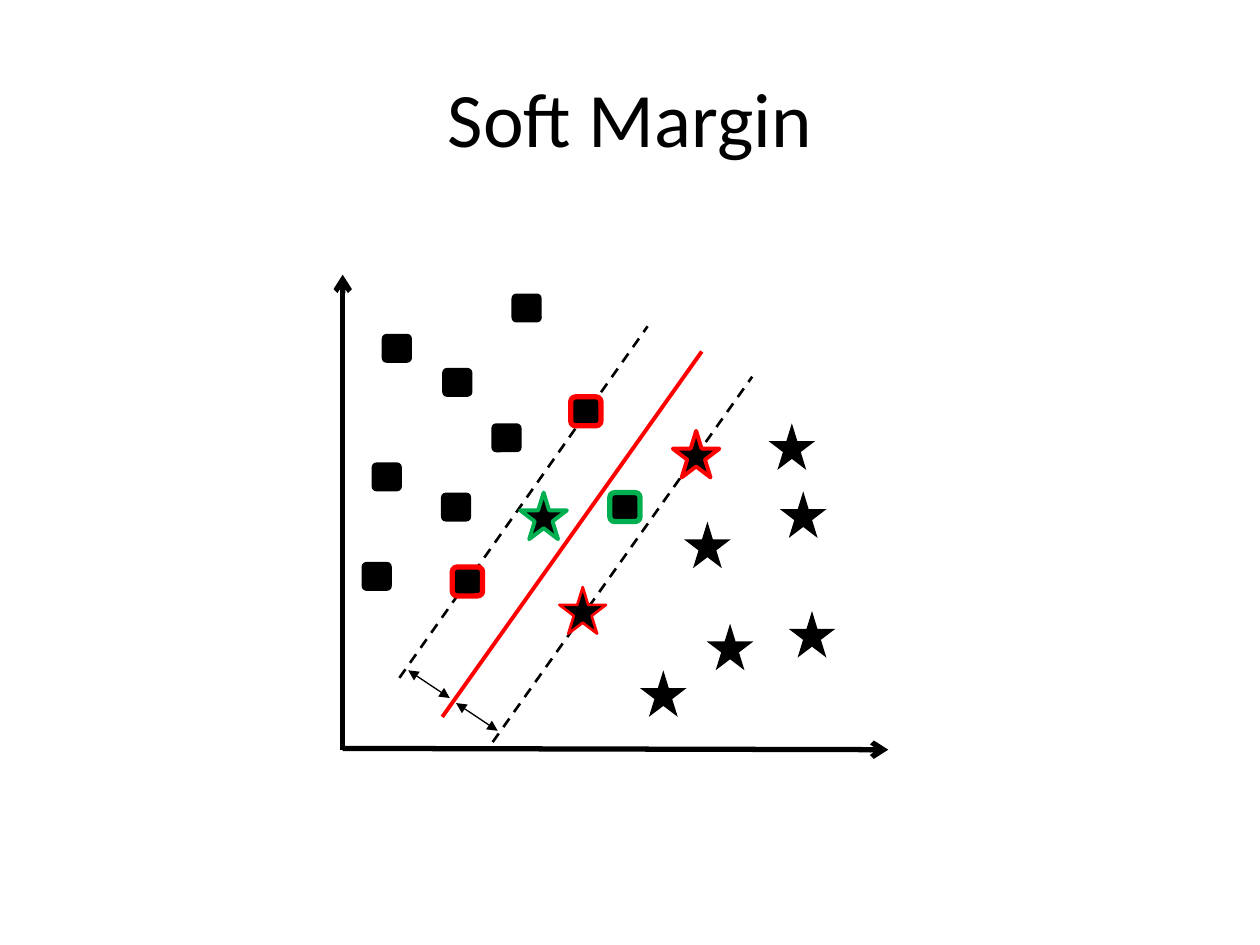
from dataclasses import dataclass

from lxml.etree import SubElement
from pptx import Presentation
from pptx.dml.color import RGBColor
from pptx.enum.dml import MSO_LINE
from pptx.enum.shapes import MSO_CONNECTOR, MSO_SHAPE
from pptx.enum.text import MSO_ANCHOR, PP_ALIGN
from pptx.oxml.ns import qn
from pptx.util import Inches, Pt


@dataclass(frozen=True)
class Theme:
    font: str = "Calibri"
    title_size: int = 44
    ink: RGBColor = RGBColor(0, 0, 0)
    support: RGBColor = RGBColor(0xFF, 0, 0)
    violation: RGBColor = RGBColor(0, 0xB0, 0x50)
    background: RGBColor = RGBColor(0xFF, 0xFF, 0xFF)


class SlideBuilder:
    def __init__(self, slide, theme):
        self.slide = slide
        self.theme = theme
        slide.background.fill.solid()
        slide.background.fill.fore_color.rgb = theme.background

    def title(self, wording):
        heading = self.slide.shapes.title
        heading.left, heading.top = Inches(0.5), Inches(0.3)
        heading.width, heading.height = Inches(9), Inches(1.25)
        heading.text_frame.vertical_anchor = MSO_ANCHOR.MIDDLE
        paragraph = heading.text_frame.paragraphs[0]
        paragraph.alignment = PP_ALIGN.CENTER
        run = paragraph.add_run()
        run.text = wording
        run.font.name = self.theme.font
        run.font.size = Pt(self.theme.title_size)
        run.font.color.rgb = self.theme.ink

    def line(self, start, end, color, width, dash=None, head=None, tail=None):
        connector = self.slide.shapes.add_connector(
            MSO_CONNECTOR.STRAIGHT, *map(Inches, (*start, *end)))
        connector.line.color.rgb = color
        connector.line.width = Pt(width)
        if dash:
            connector.line.dash_style = dash
        outline = connector.line._get_or_add_ln()
        for tag, arrow in (("a:headEnd", head), ("a:tailEnd", tail)):
            if arrow:
                SubElement(outline, qn(tag), type=arrow)
        SubElement(connector._element.spPr, qn("a:effectLst"))

    def marker(self, preset, left, top, width, height, outline, weight):
        point = self.slide.shapes.add_shape(
            preset, *map(Inches, (left, top, width, height)))
        point.shadow.inherit = False
        point.fill.solid()
        point.fill.fore_color.rgb = self.theme.ink
        if outline:
            point.line.color.rgb = outline
            point.line.width = Pt(weight)
        else:
            point.line.fill.background()

    def square(self, left, top, outline=None, weight=3):
        self.marker(MSO_SHAPE.ROUNDED_RECTANGLE, left, top, 0.24, 0.23, outline, weight)

    def star(self, left, top, outline=None, weight=2.25):
        self.marker(MSO_SHAPE.STAR_5_POINT, left, top, 0.37, 0.37, outline, weight)


def main():
    theme = Theme()
    presentation = Presentation()
    presentation.slide_width, presentation.slide_height = Inches(10), Inches(7.5)
    slide = presentation.slides.add_slide(presentation.slide_layouts[5])
    builder = SlideBuilder(slide, theme)
    builder.title("Soft Margin")

    margins = [((3.17, 5.38), (5.14, 2.59)), ((3.91, 5.89), (5.97, 2.99))]
    for start, end in margins:
        builder.line(start, end, theme.ink, 1.5, dash=MSO_LINE.DASH)

    square_class = [(2.95, 3.67), (3.51, 2.92), (3.9, 3.36), (3.5, 3.91),
                    (4.06, 2.33), (3.03, 2.65), (2.87, 4.46)]
    for left, top in square_class:
        builder.square(left, top)

    star_class = [(5.43, 4.14), (5.61, 4.95), (6.19, 3.9), (6.26, 4.85),
                  (5.08, 5.32), (6.1, 3.36)]
    for left, top in star_class:
        builder.star(left, top)

    for left, top in [(3.59, 4.5), (4.53, 3.15)]:
        builder.square(left, top, theme.support)
    builder.star(4.44, 4.66, theme.support, 1.5)
    builder.star(5.34, 3.42, theme.support)

    builder.line((3.51, 5.69), (5.57, 2.79), theme.support, 2.25)

    margin_widths = [((3.57, 5.54), (3.24, 5.32)), ((3.95, 5.8), (3.62, 5.58))]
    for start, end in margin_widths:
        builder.line(start, end, theme.ink, 0.75, head="triangle", tail="triangle")

    axes = [((2.72, 5.95), (2.72, 2.18)), ((2.72, 5.94), (7.05, 5.95))]
    for origin, tip in axes:
        builder.line(origin, tip, theme.ink, 3, tail="arrow")

    builder.square(4.84, 3.91, theme.violation)
    builder.star(4.13, 3.91, theme.violation)

    presentation.save("out.pptx")


if __name__ == "__main__":
    main()
